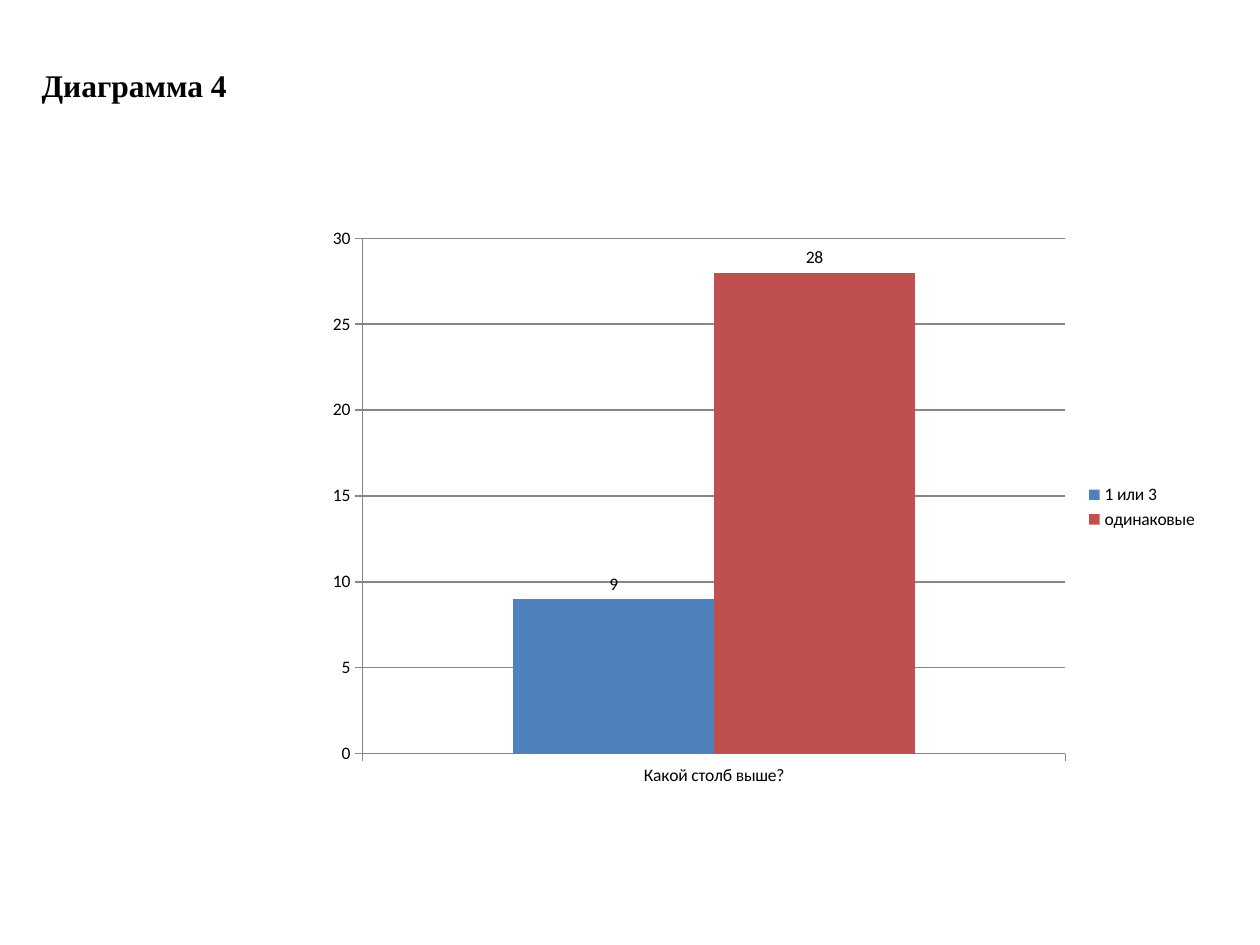
from pptx import Presentation
from pptx.chart.data import CategoryChartData
from pptx.dml.color import RGBColor
from pptx.enum.chart import XL_CHART_TYPE, XL_LABEL_POSITION, XL_LEGEND_POSITION, XL_TICK_MARK
from pptx.enum.text import MSO_ANCHOR, MSO_AUTO_SIZE, PP_ALIGN
from pptx.util import Inches, Pt

COLUMNS = XL_CHART_TYPE.COLUMN_CLUSTERED
ABOVE = XL_LABEL_POSITION.OUTSIDE_END
RIGHT = XL_LEGEND_POSITION.RIGHT
OUTSIDE = XL_TICK_MARK.OUTSIDE
TOP = MSO_ANCHOR.TOP
GROW = MSO_AUTO_SIZE.SHAPE_TO_FIT_TEXT
LEFT = PP_ALIGN.LEFT

COLORS = {"text": "000000", "line": "868686", "first": "4F81BD", "same": "C0504D"}
QUESTION = "Какой столб выше?"
ANSWERS = [("1 или 3", 9, "first"), ("одинаковые", 28, "same")]


def color(name):
    """Return the named colour."""
    return RGBColor.from_string(COLORS[name])


def set_font(font, family, size):
    """Give a font its family, size and the text colour."""
    font.name = family
    font.size = Pt(size)
    font.color.rgb = color("text")


def add_title(page, text):
    """Place the heading at the upper left."""
    title = page.shapes.title
    title.left, title.top = Inches(0.23), Inches(0.47)
    title.width, title.height = Inches(1.69), Inches(0.4)
    frame = title.text_frame
    frame.text = text
    frame.word_wrap = False
    frame.auto_size = GROW
    frame.vertical_anchor = TOP
    para = frame.paragraphs[0]
    para.alignment = LEFT
    set_font(para.font, "Times New Roman", 18)
    para.font.bold = True


def format_axis(axis):
    """Draw an axis with thin grey line and outward ticks."""
    axis.major_tick_mark = OUTSIDE
    axis.format.line.color.rgb = color("line")
    axis.format.line.width = Pt(0.75)


def add_answer_chart(page):
    """Add the column chart of answers."""
    data = CategoryChartData()
    data.categories = [QUESTION]
    for name, count, _ in ANSWERS:
        data.add_series(name, [count])
    frame = page.shapes.add_chart(
        COLUMNS, Inches(2.5), Inches(1.72), Inches(7.11), Inches(4.61), data)
    chart = frame.chart
    chart.has_title = False
    set_font(chart.font, "Calibri", 10)
    chart.has_legend = True
    chart.legend.position = RIGHT
    chart.legend.include_in_layout = False

    format_axis(chart.category_axis)
    scale = chart.value_axis
    format_axis(scale)
    scale.minimum_scale, scale.maximum_scale, scale.major_unit = 0, 30, 5
    scale.has_major_gridlines = True
    grid = scale.major_gridlines.format.line
    grid.color.rgb = color("line")
    grid.width = Pt(0.75)

    plot = chart.plots[0]
    plot.gap_width = 150
    plot.overlap = 0
    plot.vary_by_categories = False
    for series, (_, _, fill) in zip(plot.series, ANSWERS):
        series.format.fill.solid()
        series.format.fill.fore_color.rgb = color(fill)
        series.data_labels.show_value = True
        series.data_labels.position = ABOVE


def main():
    """Build and save the slide."""
    deck = Presentation()
    deck.slide_width, deck.slide_height = Inches(10), Inches(7.5)
    page = deck.slides.add_slide(deck.slide_layouts[5])
    add_answer_chart(page)
    add_title(page, "Диаграмма 4")
    deck.save("out.pptx")


if __name__ == "__main__":
    main()
